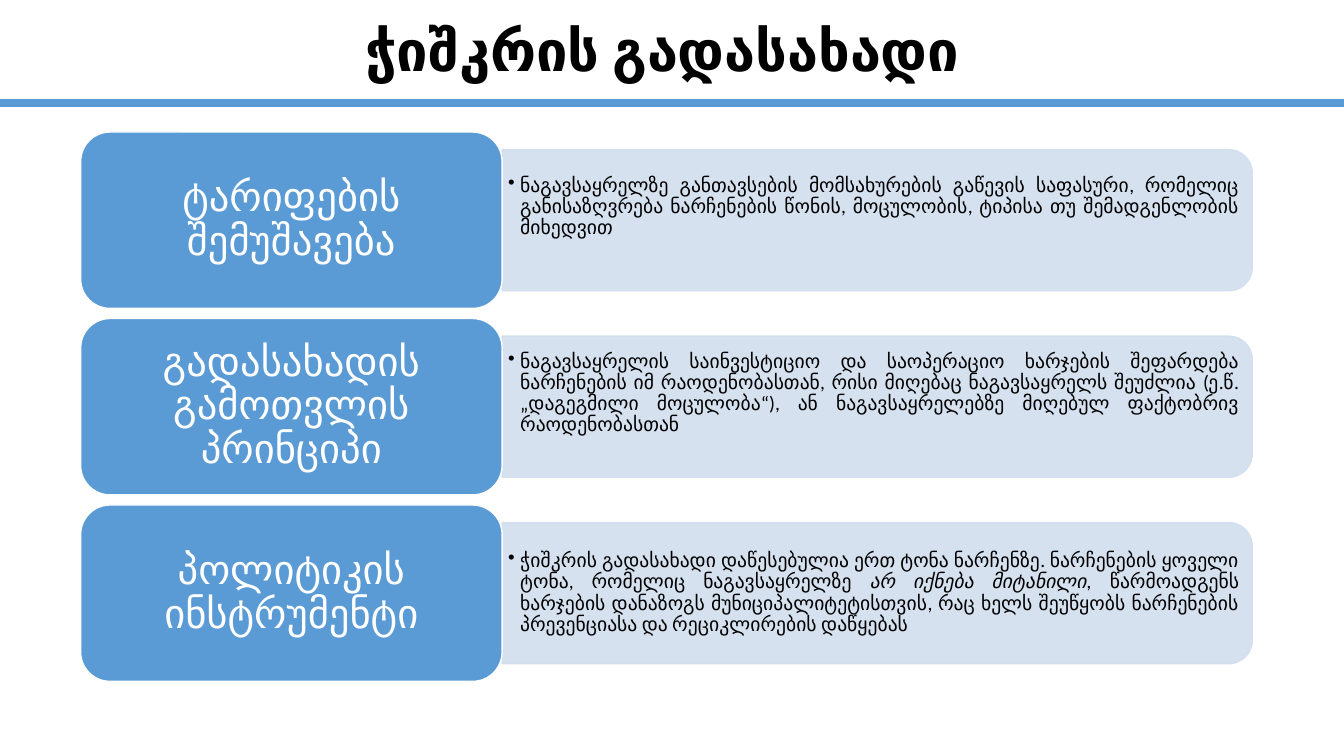
import pptx
import pptx.util
import pptx.dml.color
import pptx.enum.shapes
import pptx.enum.text
import pptx.oxml.ns
from dataclasses import dataclass
from lxml import etree
from pptx.util import Inches

ALIGN = pptx.enum.text.PP_ALIGN
SHAPE = pptx.enum.shapes.MSO_SHAPE


@dataclass(frozen=True)
class Theme:
    font: str = "Calibri"
    accent: str = "5B9BD5"
    panel: str = "D2DEEF"
    light: str = "FFFFFF"
    dark: str = "000000"
    title_size: int = 40
    label_size: int = 29
    body_size: int = 14
    panel_alpha: int = 90


class SlideBuilder:
    def __init__(self, slide, theme):
        self.slide = slide
        self.theme = theme

    def color(self, value):
        return pptx.dml.color.RGBColor.from_string(value)

    def sub(self, parent, tag, **attributes):
        return etree.SubElement(parent, pptx.oxml.ns.qn(tag), attributes)

    def set_text(self, shape, runs, size, color, align, margins=(0.1, 0.05), bold=None,
                 bulleted=False, lift=0):
        frame = shape.text_frame
        frame.word_wrap = True
        frame.vertical_anchor = pptx.enum.text.MSO_ANCHOR.MIDDLE
        frame.margin_left = frame.margin_right = Inches(margins[0])
        frame.margin_top = Inches(margins[1])
        frame.margin_bottom = Inches(margins[1] + lift)
        paragraph = frame.paragraphs[0]
        paragraph.alignment = align
        paragraph.line_spacing = 0.9
        if bulleted:
            properties = paragraph._p.get_or_add_pPr()
            properties.set("marL", str(Inches(0.12)))
            properties.set("indent", str(Inches(-0.12)))
            self.sub(properties, "a:buChar", char="•")
        paragraph.font.name = self.theme.font
        paragraph.font.size = pptx.util.Pt(size)
        paragraph.font.bold = bold
        paragraph.font.color.rgb = self.color(color)
        for text, italic in runs:
            run = paragraph.add_run()
            run.text = text
            if italic:
                run.font.italic = True

    def textbox(self, left, top, width, height):
        return self.slide.shapes.add_textbox(
            Inches(left), Inches(top), Inches(width), Inches(height))

    def block(self, kind, left, top, width, height, fill, line):
        shape = self.slide.shapes.add_shape(
            kind, Inches(left), Inches(top), Inches(width), Inches(height))
        shape.shadow.inherit = False
        shape.fill.solid()
        shape.fill.fore_color.rgb = self.color(fill)
        shape.line.color.rgb = self.color(line)
        shape.line.width = pptx.util.Pt(1)
        return shape

    def title(self, text):
        heading = self.textbox(0.82, -0.2, 11.5, 1.45)
        self.set_text(heading, [(text, False)], self.theme.title_size, self.theme.dark,
                      ALIGN.CENTER, bold=True)

    def panel(self, left, middle, length, thickness):
        panel = self.block(SHAPE.ROUND_2_SAME_RECTANGLE, left + (length - thickness) / 2,
                           middle - length / 2, thickness, length,
                           self.theme.panel, self.theme.panel)
        panel.rotation = 90
        for rgb in panel._element.spPr.iter(pptx.oxml.ns.qn("a:srgbClr")):
            self.sub(rgb, "a:alpha", val=str(self.theme.panel_alpha * 1000))

    def description(self, left, top, width, height, runs, lift):
        box = self.textbox(left, top, width, height)
        self.set_text(box, runs, self.theme.body_size, self.theme.dark, ALIGN.JUSTIFY,
                      margins=(0.06, 0.03), bulleted=True, lift=lift)

    def label(self, left, top, width, height, text):
        label = self.block(SHAPE.ROUNDED_RECTANGLE, left, top, width, height,
                           self.theme.accent, self.theme.light)
        self.set_text(label, [(text, False)], self.theme.label_size, self.theme.light,
                      ALIGN.CENTER, margins=(0.12, 0.06))

    def rule(self, y, width):
        rule = self.slide.shapes.add_connector(
            pptx.enum.shapes.MSO_CONNECTOR.STRAIGHT, 0, Inches(y), Inches(width), Inches(y))
        rule.line.color.rgb = self.color(self.theme.accent)
        rule.line.width = pptx.util.Pt(6)
        self.sub(rule._element.spPr, "a:effectLst")


TOPICS = [
    ("ტარიფების შემუშავება", 0.26, [
        ("ნაგავსაყრელზე განთავსების მომსახურების გაწევის საფასური, რომელიც "
         "განისაზღვრება ნარჩენების წონის, მოცულობის, ტიპისა თუ შემადგენლობის "
         "მიხედვით", False)]),
    ("გადასახადის გამოთვლის პრინციპი", 0.26, [
        ("ნაგავსაყრელის საინვესტიციო და საოპერაციო ხარჯების შეფარდება "
         "ნარჩენების იმ რაოდენობასთან, რისი მიღებაც ნაგავსაყრელს შეუძლია (ე.წ. "
         "„დაგეგმილი მოცულობა“), ან ნაგავსაყრელებზე მიღებულ ფაქტობრივ "
         "რაოდენობასთან", False)]),
    ("პოლიტიკის ინსტრუმენტი", 0, [
        ("ჭიშკრის გადასახადი დაწესებულია ერთ ტონა ნარჩენზე. ნარჩენების ყოველი "
         "ტონა, რომელიც ნაგავსაყრელზე ", False),
        ("არ იქნება მიტანილი,", True),
        (" წარმოადგენს ხარჯების დანაზოგს მუნიციპალიტეტისთვის, რაც ხელს "
         "შეუწყობს ნარჩენების პრევენციასა და რეციკლირების დაწყებას", False)]),
]


def main():
    presentation = pptx.Presentation()
    presentation.slide_width = Inches(13.33)
    presentation.slide_height = Inches(7.5)
    slide = presentation.slides.add_slide(presentation.slide_layouts[6])
    builder = SlideBuilder(slide, Theme())

    builder.title("ჭიშკრის გადასახადი")
    label_left, label_width, label_height, gap = 0.8, 4.18, 1.75, 0.1
    panel_left = label_left + label_width
    for index, (heading, lift, runs) in enumerate(TOPICS):
        top = 1.31 + index * (label_height + gap)
        builder.panel(panel_left, top + label_height / 2, 7.44, 1.4)
        builder.description(panel_left, top + 0.24, 7.37, 1.27, runs, lift)
        builder.label(label_left, top, label_width, label_height, heading)
    builder.rule(1.02, 13.33)

    presentation.save("out.pptx")


if __name__ == "__main__":
    main()
